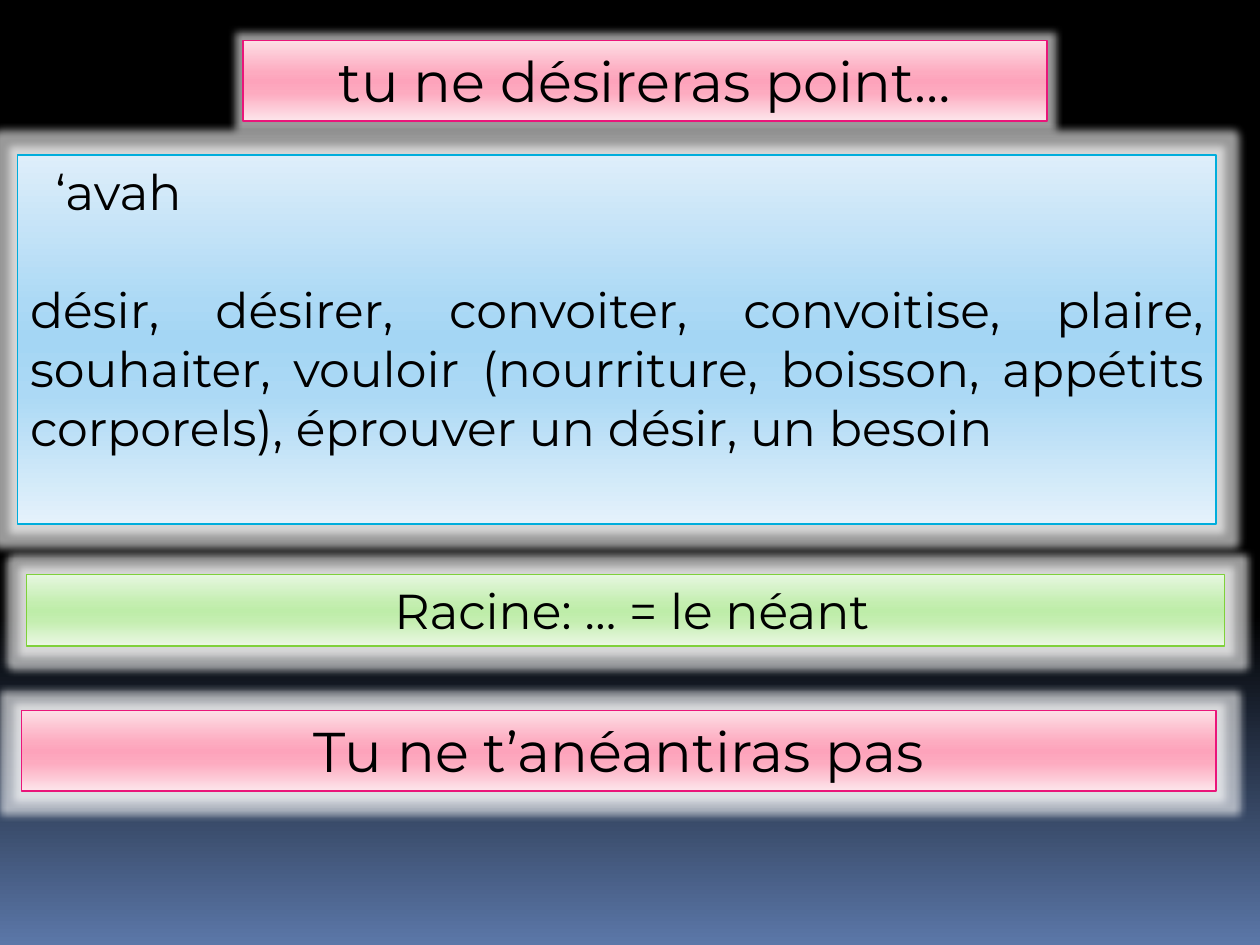
from pptx import Presentation
from pptx.dml.color import RGBColor
from pptx.enum.shapes import MSO_SHAPE
from pptx.enum.text import MSO_ANCHOR, MSO_AUTO_SIZE, PP_ALIGN
from pptx.oxml import parse_xml
from pptx.oxml.ns import nsdecls
from pptx.util import Inches, Pt

PINK = {"line": "EA157A", "fill": [(0, "FDDEE5"), (40, "FDABC0"), (50, "FDA3BB"),
                                   (65, "FDABC0"), (100, "FDE5EB")]}
BLUE = {"line": "00ADDC", "fill": [(0, "DEEEFA"), (40, "ACD9F5"), (50, "A4D6F4"),
                                   (65, "ACD9F5"), (100, "E5F2FB")]}
GREEN = {"line": "7FD13B", "fill": [(0, "E6F7E0"), (40, "C4EEB0"), (50, "BEEDA9"),
                                    (65, "C4EEB0"), (100, "ECF8E6")]}
THEME = {
    "font": "Montserrat", "text": "000000", "large": 32, "normal": 28,
    "line_width": 0.94, "glow": "FFFFFF", "glow_radius": 0.12, "glow_alpha": 60,
    "background": [(0, "000000"), (65, "000000"), (100, "5B77A8")],
}

# Content: paragraphs are (text, left indent in inches, space before in points)
TITLE = {"at": (1.93, 0.32, 6.38, 0.64), "palette": PINK, "size": "large",
         "align": PP_ALIGN.CENTER, "paragraphs": [("tu ne désireras point…", 0, 0)]}
PANELS = [
    {"at": (0.14, 1.23, 9.51, 2.93), "palette": BLUE, "size": "normal",
     "align": PP_ALIGN.JUSTIFY, "paragraphs": [
         ("‘avah", 0.2, 0),
         ("désir, désirer, convoiter, convoitise, plaire, souhaiter, vouloir "
          "(nourriture, boisson, appétits corporels), éprouver un désir, un besoin", 0, 34)]},
    {"at": (0.21, 4.56, 9.51, 0.57), "palette": GREEN, "size": "normal",
     "align": PP_ALIGN.CENTER, "paragraphs": [("Racine: … = le néant", 0.1, 0)]},
    {"at": (0.17, 5.64, 9.48, 0.64), "palette": PINK, "size": "large",
     "align": PP_ALIGN.CENTER, "paragraphs": [("Tu ne t’anéantiras pas", 0, 0)]},
]


def fill_gradient(fill, element, stops):
    """Fill from top to bottom with any number of colour stops."""
    fill.gradient()
    fill.gradient_angle = 270
    stop_list = element.xpath(".//a:gradFill/a:gsLst")[0]
    for stop in list(stop_list):
        stop_list.remove(stop)
    for position, colour in stops:
        stop_list.append(parse_xml(
            f'<a:gs {nsdecls("a")} pos="{position * 1000}"><a:srgbClr val="{colour}"/></a:gs>'))


def add_glow(shape):
    shape.shadow.inherit = False
    effects = shape._element.xpath("./p:spPr/a:effectLst")[0]
    effects.append(parse_xml(
        f'<a:glow {nsdecls("a")} rad="{Inches(THEME["glow_radius"])}">'
        f'<a:srgbClr val="{THEME["glow"]}">'
        f'<a:alpha val="{THEME["glow_alpha"] * 1000}"/></a:srgbClr></a:glow>'))


def format_panel(shape, panel):
    # Box
    shape.left, shape.top, shape.width, shape.height = map(Inches, panel["at"])
    fill_gradient(shape.fill, shape._element, panel["palette"]["fill"])
    shape.line.color.rgb = RGBColor.from_string(panel["palette"]["line"])
    shape.line.width = Pt(THEME["line_width"])
    add_glow(shape)

    # Text
    frame = shape.text_frame
    frame.word_wrap = True
    frame.auto_size = MSO_AUTO_SIZE.NONE
    frame.vertical_anchor = MSO_ANCHOR.TOP
    frame.text = "\n".join(text for text, _, _ in panel["paragraphs"])
    for para, (_, indent, before) in zip(frame.paragraphs, panel["paragraphs"]):
        para.alignment = panel["align"]
        para.space_before = Pt(before)
        para.line_spacing = 1.0
        if indent:
            para._p.get_or_add_pPr().set("marL", str(Inches(indent)))
        for span in para.runs:
            span.font.name = THEME["font"]
            span.font.size = Pt(THEME[panel["size"]])
            span.font.color.rgb = RGBColor.from_string(THEME["text"])


def main():
    deck = Presentation()
    deck.slide_width, deck.slide_height = Inches(10), Inches(7.5)
    slide = deck.slides.add_slide(deck.slide_layouts[5])
    fill_gradient(slide.background.fill, slide._element, THEME["background"])

    format_panel(slide.shapes.title, TITLE)
    for panel in PANELS:
        box = slide.shapes.add_shape(MSO_SHAPE.RECTANGLE, *map(Inches, panel["at"]))
        format_panel(box, panel)

    deck.save("out.pptx")


if __name__ == "__main__":
    main()
